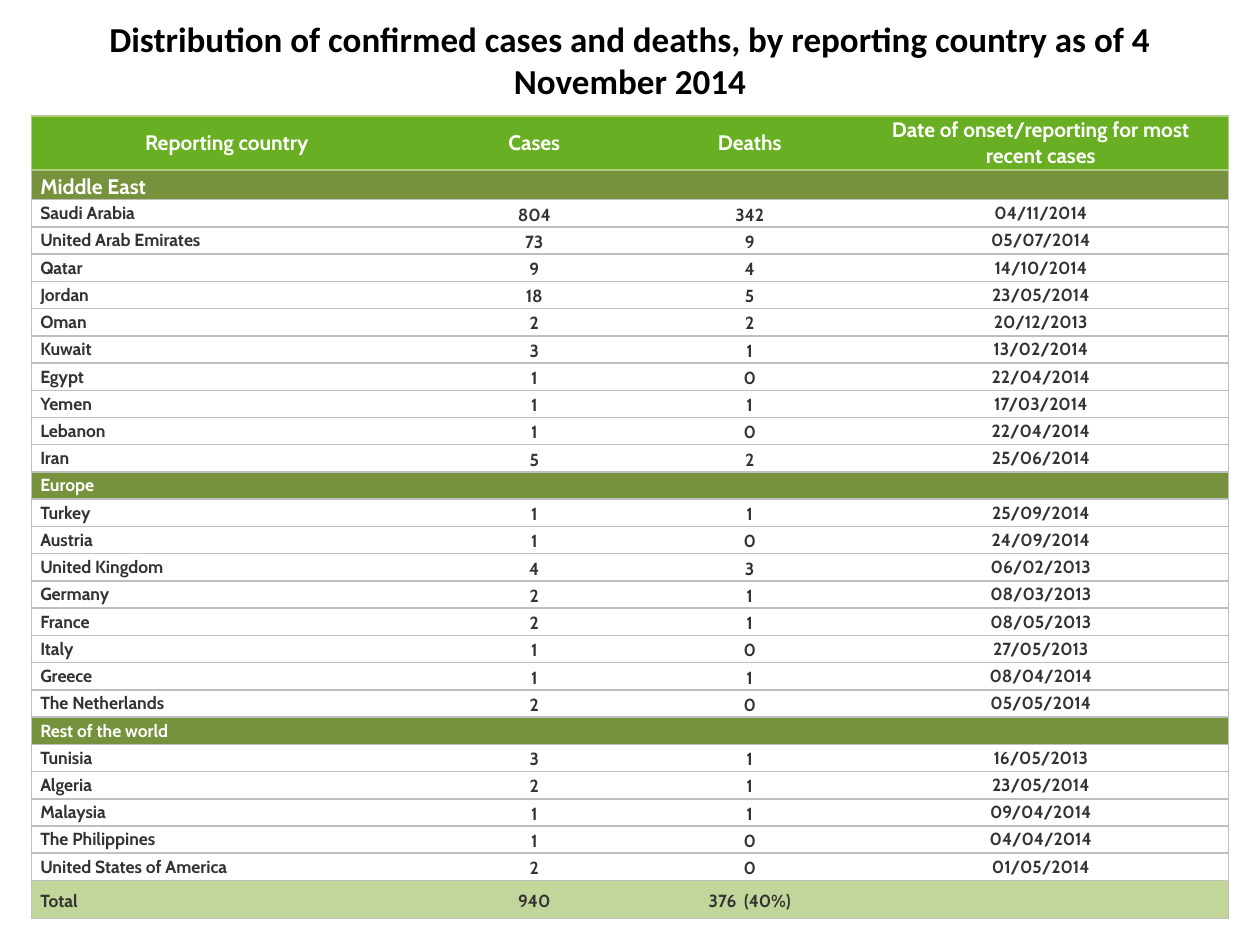
import pptx
import pptx.util
import pptx.dml.color
import pptx.enum.text
import pptx.oxml.ns
from lxml import etree

Inches = pptx.util.Inches
Pt = pptx.util.Pt
ALIGN = pptx.enum.text.PP_ALIGN
ANCHOR = pptx.enum.text.MSO_ANCHOR
qn = pptx.oxml.ns.qn

COLORS = {
    "black": "000000", "white": "FFFFFF", "dark": "333333",
    "head": "69AF23", "band": "76923C", "total": "C2D69B",
    "grid": "BFBFBF", "edge": "B3CC82",
}
NO_STYLE = "{2D5ABB26-0587-4C30-8999-92F81FD0307C}"
TITLE = "Distribution of confirmed cases and deaths, by reporting country as of 4 November 2014"
HEAD = ["Reporting country", "Cases", "Deaths",
        "Date of onset/reporting for most recent cases"]
REGIONS = {
    "Middle East": [
        ("Saudi Arabia", "804", "342", "04/11/2014"),
        ("United Arab Emirates", "73", "9", "05/07/2014"),
        ("Qatar", "9", "4", "14/10/2014"),
        ("Jordan", "18", "5", "23/05/2014"),
        ("Oman", "2", "2", "20/12/2013"),
        ("Kuwait", "3", "1", "13/02/2014"),
        ("Egypt", "1", "0", "22/04/2014"),
        ("Yemen", "1", "1", "17/03/2014"),
        ("Lebanon", "1", "0", "22/04/2014"),
        ("Iran", "5", "2", "25/06/2014"),
    ],
    "Europe": [
        ("Turkey", "1", "1", "25/09/2014"),
        ("Austria", "1", "0", "24/09/2014"),
        ("United Kingdom", "4", "3", "06/02/2013"),
        ("Germany", "2", "1", "08/03/2013"),
        ("France", "2", "1", "08/05/2013"),
        ("Italy", "1", "0", "27/05/2013"),
        ("Greece", "1", "1", "08/04/2014"),
        ("The Netherlands", "2", "0", "05/05/2014"),
    ],
    "Rest of the world": [
        ("Tunisia", "3", "1", "16/05/2013"),
        ("Algeria", "2", "1", "23/05/2014"),
        ("Malaysia", "1", "1", "09/04/2014"),
        ("The Philippines", "1", "0", "04/04/2014"),
        ("United States of America", "2", "0", "01/05/2014"),
    ],
}
TOTAL = ("Total", "940", "376  (40%)", "")
WIDTHS = [3.1, 1.78, 1.64, 2.98]
HEIGHT, HEAD_H, TOTAL_H = 6.35, 0.43, 0.3


def write(frame, text, size=10, font="Cabin", color="dark",
          align=ALIGN.LEFT, space=None):
    para = frame.paragraphs[0]
    para.alignment = align
    para.line_spacing = space
    if not text:
        # An empty cell still takes its height from the end mark.
        etree.SubElement(para._p, qn("a:endParaRPr"), sz=str(size * 100))
        return
    run = para.add_run()
    run.text = text
    run.font.size = Pt(size)
    run.font.name = font
    run.font.bold = True
    run.font.color.rgb = pptx.dml.color.RGBColor.from_string(COLORS[color])


def border(cell, **sides):
    """Draw the sides L, R, T and B in the named colour; None means no line."""
    props = cell._tc.get_or_add_tcPr()
    for side in "LRTB":
        line = etree.SubElement(props, qn("a:ln" + side), w=str(Pt(1)))
        color = sides.get(side)
        if color:
            fill = etree.SubElement(line, qn("a:solidFill"))
            etree.SubElement(fill, qn("a:srgbClr"), val=COLORS[color])
        else:
            etree.SubElement(line, qn("a:noFill"))


def fill_cell(cell, color):
    if color:
        cell.fill.solid()
        cell.fill.fore_color.rgb = pptx.dml.color.RGBColor.from_string(COLORS[color])
    else:
        cell.fill.background()


def list_rows():
    """Give each table row as its kind and its texts."""
    rows = [("head", HEAD)]
    for region, lands in REGIONS.items():
        rows.append(("band", (region, "", "", "")))
        rows += [("land", land) for land in lands]
    return rows + [("total", TOTAL)]


def add_title(slide):
    title = slide.shapes.title
    title.left, title.top = Inches(0.5), Inches(0.08)
    title.width, title.height = Inches(9), Inches(0.78)
    title.text_frame.vertical_anchor = ANCHOR.MIDDLE
    write(title.text_frame, TITLE, size=20, font="Calibri", color="black",
          align=ALIGN.CENTER)


def add_cases(slide):
    rows = list_rows()
    last = len(WIDTHS) - 1
    table = slide.shapes.add_table(
        len(rows), len(WIDTHS), Inches(0.25), Inches(0.92),
        Inches(sum(WIDTHS)), Inches(HEIGHT)).table
    table.first_row = table.horz_banding = False
    table._tbl.tblPr.find(qn("a:tableStyleId")).text = NO_STYLE
    for col, width in zip(table.columns, WIDTHS):
        col.width = Inches(width)

    row_h = (HEIGHT - HEAD_H - TOTAL_H) / (len(rows) - 2)
    heights = {"head": HEAD_H, "total": TOTAL_H}
    for r, (kind, texts) in enumerate(rows):
        table.rows[r].height = Inches(heights.get(kind, row_h))
        head = kind == "head"
        edge = "edge" if head else "grid"
        for c, text in enumerate(texts):
            cell = table.cell(r, c)
            cell.margin_left = cell.margin_right = Inches(0.07)
            cell.margin_top = cell.margin_bottom = 0
            mid = kind in heights or 0 < c < last
            cell.vertical_anchor = ANCHOR.MIDDLE if mid else ANCHOR.TOP
            border(cell, L=edge if c == 0 else None,
                   R=edge if c == last else None,
                   T="edge" if r < 2 else "grid", B=edge)
            fill_cell(cell, kind if kind in COLORS else None)
            write(cell.text_frame, text, size=12 if r < 2 and text else 10,
                  color="white" if kind in ("head", "band") else "dark",
                  align=ALIGN.CENTER if head or c else ALIGN.LEFT,
                  space=None if head else 1.15)


def main():
    deck = pptx.Presentation()
    deck.slide_width, deck.slide_height = Inches(10), Inches(7.5)
    slide = deck.slides.add_slide(deck.slide_layouts[5])
    add_title(slide)
    add_cases(slide)
    deck.save("out.pptx")


if __name__ == "__main__":
    main()
